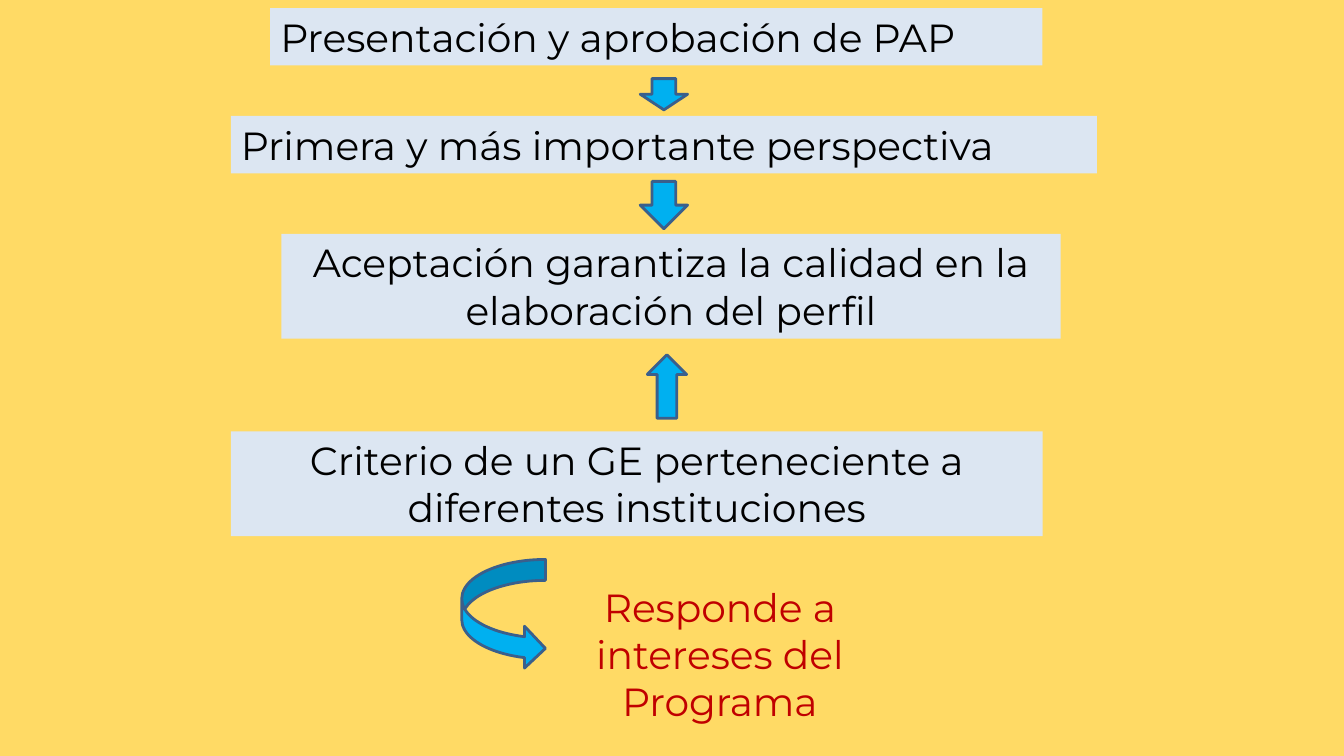
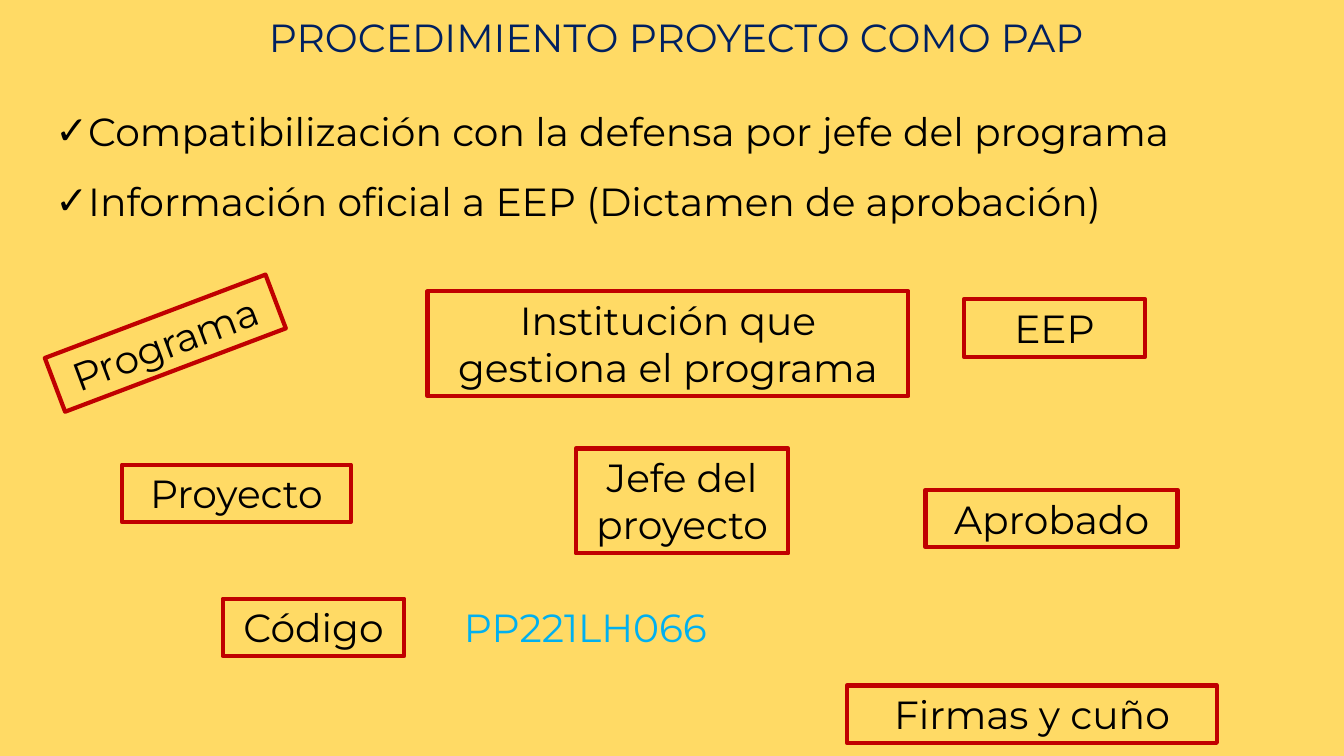
from dataclasses import dataclass

from lxml import etree
from pptx import Presentation
from pptx.dml.color import RGBColor
from pptx.enum.shapes import MSO_SHAPE
from pptx.enum.text import MSO_ANCHOR, MSO_AUTO_SIZE, PP_ALIGN
from pptx.oxml.ns import qn
from pptx.util import Inches, Pt

LEFT, CENTER, JUSTIFY = PP_ALIGN.LEFT, PP_ALIGN.CENTER, PP_ALIGN.JUSTIFY
RECTANGLE = MSO_SHAPE.RECTANGLE
DOWN, UP, CURVED = MSO_SHAPE.DOWN_ARROW, MSO_SHAPE.UP_ARROW, MSO_SHAPE.CURVED_RIGHT_ARROW
TITLE_AND_CONTENT, TITLE_ONLY = 1, 5


@dataclass(frozen=True)
class Theme:
    font: str = "Montserrat"
    size: Pt = Pt(28)
    background: RGBColor = RGBColor(0xFF, 0xDA, 0x65)
    panel: RGBColor = RGBColor(0xDC, 0xE6, 0xF2)
    text: RGBColor = RGBColor(0x00, 0x00, 0x00)
    title: RGBColor = RGBColor(0x00, 0x20, 0x60)
    red: RGBColor = RGBColor(0xC0, 0x00, 0x00)
    sky: RGBColor = RGBColor(0x00, 0xB0, 0xF0)
    arrow_line: RGBColor = RGBColor(0x3A, 0x5F, 0x8C)
    arrow_width: Pt = Pt(2)
    frame_width: Pt = Pt(3)


THEME = Theme()
ONE_LINE, TWO_LINES = 0.57, 1.04


def write(shape, lines, color=THEME.text, align=CENTER):
    """Fill a shape with one paragraph per line, in the shared type style."""
    frame = shape.text_frame
    frame.word_wrap = True
    frame.auto_size = MSO_AUTO_SIZE.NONE
    frame.vertical_anchor = MSO_ANCHOR.TOP
    for index, line in enumerate(lines):
        paragraph = frame.add_paragraph() if index else frame.paragraphs[0]
        paragraph.alignment = align
        run = paragraph.add_run()
        run.text = line
        run.font.name = THEME.font
        run.font.size = THEME.size
        run.font.color.rgb = color


def place(shape, left, top, width, height):
    shape.left, shape.top = Inches(left), Inches(top)
    shape.width, shape.height = Inches(width), Inches(height)


presentation = Presentation()
presentation.slide_width, presentation.slide_height = Inches(13.33), Inches(7.5)
background = presentation.slide_master.background.fill
background.solid()
background.fore_color.rgb = THEME.background

# Slide 1: approval flow
slide = presentation.slides.add_slide(presentation.slide_layouts[TITLE_ONLY])
title = slide.shapes.title
place(title, 2.68, 0.08, 7.66, ONE_LINE)
title.fill.solid()
title.fill.fore_color.rgb = THEME.panel
write(title, ["Presentación y aprobación de PAP"], align=LEFT)

panels = [
    ("Primera y más importante perspectiva", 2.29, 1.15, 8.59, ONE_LINE, LEFT),
    ("Aceptación garantiza la calidad en la elaboración del perfil",
     2.79, 2.32, 7.73, TWO_LINES, CENTER),
    ("Criterio de un GE perteneciente a diferentes instituciones",
     2.29, 4.28, 8.05, TWO_LINES, CENTER),
]
for text, left, top, width, height, align in panels:
    panel = slide.shapes.add_shape(
        RECTANGLE, Inches(left), Inches(top), Inches(width), Inches(height))
    panel.shadow.inherit = False
    panel.fill.solid()
    panel.fill.fore_color.rgb = THEME.panel
    panel.line.fill.background()
    write(panel, [text], align=align)

arrows = [
    (DOWN, 6.35, 0.78, 0.47, 0.31),
    (DOWN, 6.35, 1.8, 0.47, 0.47),
    (UP, 6.42, 3.52, 0.39, 0.63),
    (CURVED, 4.58, 5.55, 0.83, 1.09),
]
for kind, *bounds in arrows:
    arrow = slide.shapes.add_shape(kind, *map(Inches, bounds))
    arrow.shadow.inherit = False
    arrow.fill.solid()
    arrow.fill.fore_color.rgb = THEME.sky
    arrow.line.color.rgb = THEME.arrow_line
    arrow.line.width = THEME.arrow_width

response = slide.shapes.add_textbox(Inches(5.58), Inches(5.74), Inches(3.12), Inches(1.51))
write(response, ["Responde a intereses del Programa"], THEME.red)

# Slide 2: procedure
slide = presentation.slides.add_slide(presentation.slide_layouts[TITLE_AND_CONTENT])
title = slide.shapes.title
place(title, 1.82, 0.08, 9.77, ONE_LINE)
write(title, ["PROCEDIMIENTO PROYECTO COMO PAP"], THEME.title)

body = slide.placeholders[1]
place(body, 0.45, 0.78, 12.49, 1.51)
write(body, [
    "Compatibilización con la defensa por jefe del programa",
    "Información oficial a EEP (Dictamen de aprobación)",
], align=JUSTIFY)
for paragraph in body.text_frame.paragraphs:
    paragraph.line_spacing = 1.5
    paragraph.space_before = Pt(0)
    properties = paragraph._p.get_or_add_pPr()
    properties.set("marL", str(Inches(0.31)))
    properties.set("indent", str(-Inches(0.31)))
    etree.SubElement(properties, qn("a:buFont"), typeface="Arial")
    etree.SubElement(properties, qn("a:buChar"), char="✓")

frames = [
    ("Programa", 0.47, 3.12, 2.34, ONE_LINE, -20.7),
    ("Institución que gestiona el programa", 4.24, 2.89, 4.77, TWO_LINES, 0),
    ("EEP", 9.56, 2.97, 1.8, ONE_LINE, 0),
    ("Proyecto", 1.21, 4.61, 2.27, ONE_LINE, 0),
    ("Jefe del proyecto", 5.71, 4.45, 2.11, TWO_LINES, 0),
    ("Aprobado", 9.18, 4.86, 2.5, ONE_LINE, 0),
    ("Código", 2.21, 5.94, 1.8, ONE_LINE, 0),
    ("Firmas y cuño", 8.4, 6.8, 3.67, ONE_LINE, 0),
]
for text, left, top, width, height, rotation in frames:
    box = slide.shapes.add_shape(
        RECTANGLE, Inches(left), Inches(top), Inches(width), Inches(height))
    box.shadow.inherit = False
    box.rotation = rotation
    box.fill.background()
    box.line.color.rgb = THEME.red
    box.line.width = THEME.frame_width
    write(box, [text])

code = slide.shapes.add_textbox(Inches(4.32), Inches(5.94), Inches(2.97), Inches(ONE_LINE))
write(code, ["PP221LH066"], THEME.sky)

presentation.save("out.pptx")
